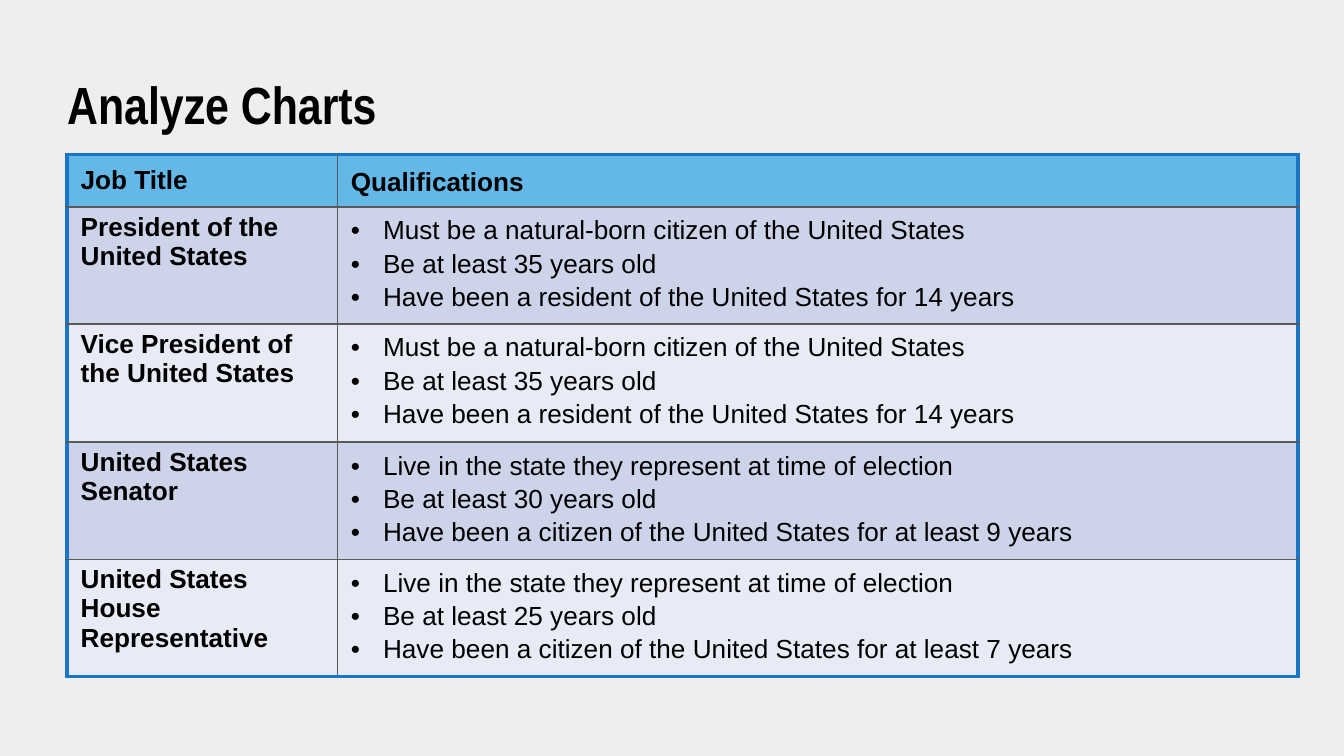
"""Build a slide with a table of job titles and their qualifications."""
from lxml.etree import SubElement
from pptx import Presentation
from pptx.dml.color import RGBColor
from pptx.enum.text import MSO_ANCHOR, MSO_AUTO_SIZE, PP_ALIGN
from pptx.oxml.ns import qn
from pptx.util import Inches, Pt

THEME = {
    "background": "EEEEEE", "text": "000000", "header": "63B8E8",
    "bands": ["CDD4EA", "E8EBF5"], "frame": "1875C8", "grid": "595959",
    "frame_width": Pt(2.25), "grid_width": Pt(1),
    "title": {"name": "Arial Narrow", "size": Pt(28), "bold": True},
    "heading": {"name": "Arial", "size": Pt(14), "bold": True},
    "body": {"name": "Arial", "size": Pt(14), "bold": False},
}
COLUMN_WIDTHS = [2.01, 7.15]
ROW_HEIGHTS = [0.39, 0.87, 0.88, 0.87, 0.87]
NATURAL_BORN = [
    "Must be a natural-born citizen of the United States",
    "Be at least 35 years old",
    "Have been a resident of the United States for 14 years",
]
ROWS = [("Job Title", ["Qualifications"])]
ROWS += [(f"{office} of the United States", NATURAL_BORN) for office in ("President", "Vice President")]
ROWS += [
    (f"United States {office}", [
        "Live in the state they represent at time of election",
        f"Be at least {age} years old",
        f"Have been a citizen of the United States for at least {years} years",
    ])
    for office, age, years in (("Senator", 30, 9), ("House Representative", 25, 7))
]


def apply_format(target, values):
    """Set each named attribute of the target."""
    for name, value in values.items():
        setattr(target, name, value)


def write_paragraph(paragraph, text, style, spacing, bullet=False):
    """Fill a paragraph with styled text and an optional bullet."""
    paragraph.text = text
    apply_format(paragraph, {"alignment": PP_ALIGN.LEFT, "line_spacing": spacing})
    if bullet:
        properties = paragraph._p.get_or_add_pPr()
        properties.set("marL", str(Inches(0.24)))
        properties.set("indent", str(Inches(-0.24)))
        bullet_color = SubElement(properties, qn("a:buClr"))
        SubElement(bullet_color, qn("a:srgbClr"), val=THEME["text"])
        SubElement(properties, qn("a:buFont"), typeface="Arial")
        SubElement(properties, qn("a:buChar"), char="•")
    font = paragraph.runs[0].font
    apply_format(font, THEME[style])
    font.color.rgb = RGBColor.from_string(THEME["text"])


presentation = Presentation()
apply_format(presentation, {"slide_width": Inches(10), "slide_height": Inches(10) * 9 // 16})
slide = presentation.slides.add_slide(presentation.slide_layouts[5])
slide.background.fill.solid()
slide.background.fill.fore_color.rgb = RGBColor.from_string(THEME["background"])

title = slide.shapes.title
apply_format(title, {
    "left": Inches(0.5), "top": Inches(0.59), "width": Inches(4.08), "height": Inches(0.42),
})
apply_format(title.text_frame, {
    "margin_left": 0, "margin_top": 0, "margin_right": 0, "margin_bottom": 0,
    "word_wrap": True, "vertical_anchor": MSO_ANCHOR.MIDDLE,
    "auto_size": MSO_AUTO_SIZE.SHAPE_TO_FIT_TEXT,
})
write_paragraph(title.text_frame.paragraphs[0], "Analyze Charts", "title", 0.9)

table = slide.shapes.add_table(
    len(ROWS), len(COLUMN_WIDTHS), Inches(0.5), Inches(1.15),
    Inches(sum(COLUMN_WIDTHS)), Inches(sum(ROW_HEIGHTS)),
).table
for column, width in zip(table.columns, COLUMN_WIDTHS):
    column.width = Inches(width)
for row, height in zip(table.rows, ROW_HEIGHTS):
    row.height = Inches(height)

for row_index, (job, qualifications) in enumerate(ROWS):
    is_header = row_index == 0
    fill_color = THEME["header"] if is_header else THEME["bands"][(row_index - 1) % 2]
    for column_index, lines in enumerate([[job], qualifications]):
        cell = table.cell(row_index, column_index)
        apply_format(cell, {
            "margin_left": Inches(0.1), "margin_right": Inches(0.1),
            "margin_top": Inches(0.04), "margin_bottom": Inches(0.04),
            "vertical_anchor": MSO_ANCHOR.MIDDLE if is_header else MSO_ANCHOR.TOP,
        })
        on_frame = {
            "a:lnL": column_index == 0,
            "a:lnR": column_index == len(COLUMN_WIDTHS) - 1,
            "a:lnT": is_header,
            "a:lnB": row_index == len(ROWS) - 1,
        }
        cell_properties = cell._tc.get_or_add_tcPr()
        for edge, framed in on_frame.items():
            kind = "frame" if framed else "grid"
            border = SubElement(cell_properties, qn(edge), w=str(THEME[f"{kind}_width"]))
            border_fill = SubElement(border, qn("a:solidFill"))
            SubElement(border_fill, qn("a:srgbClr"), val=THEME[kind])
        cell.fill.solid()
        cell.fill.fore_color.rgb = RGBColor.from_string(fill_color)

        is_list = column_index == 1 and not is_header
        style = "body" if is_list else "heading"
        spacing = 1.13 if column_index == 1 else 1.0
        for line_index, line in enumerate(lines):
            frame = cell.text_frame
            paragraph = frame.add_paragraph() if line_index else frame.paragraphs[0]
            write_paragraph(paragraph, line, style, spacing, is_list)

presentation.save("out.pptx")
